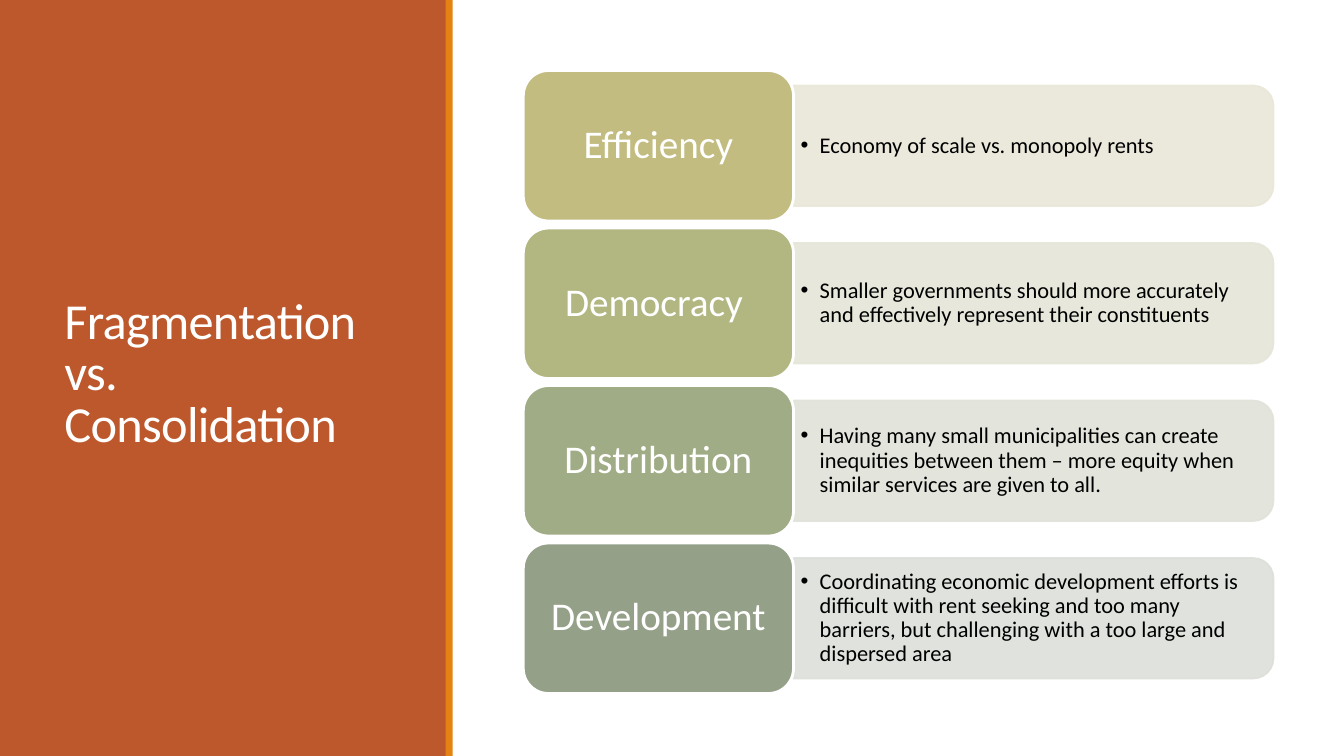
from dataclasses import dataclass

import pptx
import pptx.dml.color
import pptx.enum.shapes
import pptx.enum.text
import pptx.oxml.ns
import pptx.util
from lxml import etree

Inches = pptx.util.Inches
Pt = pptx.util.Pt
MSO_SHAPE = pptx.enum.shapes.MSO_SHAPE
PP_ALIGN = pptx.enum.text.PP_ALIGN
qn = pptx.oxml.ns.qn


@dataclass(frozen=True)
class Theme:
    font: str = "Calibri"
    panel: str = "BD582C"
    accent: str = "E48312"
    light: str = "FFFFFF"
    dark: str = "000000"
    title_size: int = 36
    label_size: int = 28
    detail_size: int = 16


THEME = Theme()

# label, detail, label fill, detail fill
CRITERIA = [
    ("Efficiency", "Economy of scale vs. monopoly rents", "C2BC80", "E9E7D8"),
    ("Democracy ", "Smaller governments should more accurately and effectively "
     "represent their constituents", "B2B782", "E5E6D8"),
    ("Distribution", "Having many small municipalities can create inequities between "
     "them – more equity when similar services are given to all.", "A0AC85", "E0E3D9"),
    ("Development", "Coordinating economic development efforts is difficult with rent "
     "seeking and too many barriers, but challenging with a too large and dispersed area",
     "94A088", "DCDFDA"),
]


def rgb(value):
    return pptx.dml.color.RGBColor.from_string(value)


def add_block(slide, kind, box, fill, line=None, line_width=0):
    shape = slide.shapes.add_shape(kind, *map(Inches, box))
    shape.shadow.inherit = False
    shape.fill.solid()
    shape.fill.fore_color.rgb = rgb(fill)
    if line:
        shape.line.color.rgb = rgb(line)
        shape.line.width = Pt(line_width)
    else:
        shape.line.fill.background()
    return shape


def write(shape, text, size, color, spacing, margins, align=PP_ALIGN.LEFT):
    """Fill a shape with one vertically centred paragraph and return it."""
    frame = shape.text_frame
    frame.word_wrap = True
    frame.vertical_anchor = pptx.enum.text.MSO_ANCHOR.MIDDLE
    frame.margin_left = frame.margin_right = Inches(margins[0])
    frame.margin_top = frame.margin_bottom = Inches(margins[1])
    frame.text = text
    paragraph = frame.paragraphs[0]
    paragraph.alignment = align
    paragraph.line_spacing = spacing
    font = paragraph.runs[0].font
    font.name, font.size = THEME.font, Pt(size)
    font.color.rgb = rgb(color)
    return paragraph


def add_bullet(paragraph, indent):
    properties = paragraph._p.get_or_add_pPr()
    properties.set("marL", str(Inches(indent)))
    properties.set("indent", str(-Inches(indent)))
    etree.SubElement(properties, qn("a:buFont"), typeface="Arial")
    etree.SubElement(properties, qn("a:buChar"), char="•")


def set_opacity(shape, percent):
    """Apply one opacity to both fill and outline."""
    for color in shape._element.spPr.iter(qn("a:srgbClr")):
        etree.SubElement(color, qn("a:alpha"), val=str(percent * 1000))


def add_title_panel(slide, left, top, width, height):
    add_block(slide, MSO_SHAPE.RECTANGLE, (left, top, width, height), THEME.panel)
    title = slide.shapes.add_textbox(
        Inches(left + 0.54), Inches(top + 0.57), Inches(width - 1.06), Inches(6.31))
    paragraph = write(title, "Fragmentation vs. Consolidation", THEME.title_size,
                      THEME.light, 0.85, (0.1, 0.05))
    paragraph.runs[0].font._element.set("spc", "-50")
    add_block(slide, MSO_SHAPE.RECTANGLE, (left + width - 0.01, top, 0.07, height),
              THEME.accent)


def add_criterion(slide, left, top, width, height, criterion):
    label, detail, label_fill, detail_fill = criterion
    label_width = 2.68
    detail_left, detail_width = left + label_width, width - label_width
    detail_height = 0.8 * height
    middle = top + height / 2

    # The panel is drawn upright, then turned so its round corners face right.
    center = detail_left + detail_width / 2
    panel = add_block(
        slide, MSO_SHAPE.ROUND_2_SAME_RECTANGLE,
        (center - detail_height / 2, middle - detail_width / 2, detail_height, detail_width),
        detail_fill, detail_fill, 1.25)
    panel.rotation = 90
    set_opacity(panel, 90)

    text = slide.shapes.add_textbox(
        Inches(detail_left), Inches(middle - 0.535), Inches(detail_width - 0.06), Inches(1.07))
    paragraph = write(text, detail, THEME.detail_size, THEME.dark, 0.9, (0.07, 0.03))
    add_bullet(paragraph, 0.19)

    card = add_block(slide, MSO_SHAPE.ROUNDED_RECTANGLE, (left, top, label_width, height),
                     label_fill, THEME.light, 2)
    write(card, label, THEME.label_size, THEME.light, 0.9, (0.12, 0.06), PP_ALIGN.CENTER)


def add_criteria(slide, left, top, width, height):
    gap = 0.07
    row_height = (height + gap) / len(CRITERIA) - gap
    for index, criterion in enumerate(CRITERIA):
        add_criterion(slide, left, top + index * (row_height + gap), width, row_height,
                      criterion)


def main():
    presentation = pptx.Presentation()
    presentation.slide_width = Inches(13.33)
    presentation.slide_height = Inches(7.5)
    slide = presentation.slides.add_slide(presentation.slide_layouts[6])
    add_title_panel(slide, 0, 0, 4.43, 7.5)
    add_criteria(slide, 5.19, 0.7, 7.44, 6.18)
    presentation.save("out.pptx")


if __name__ == "__main__":
    main()
